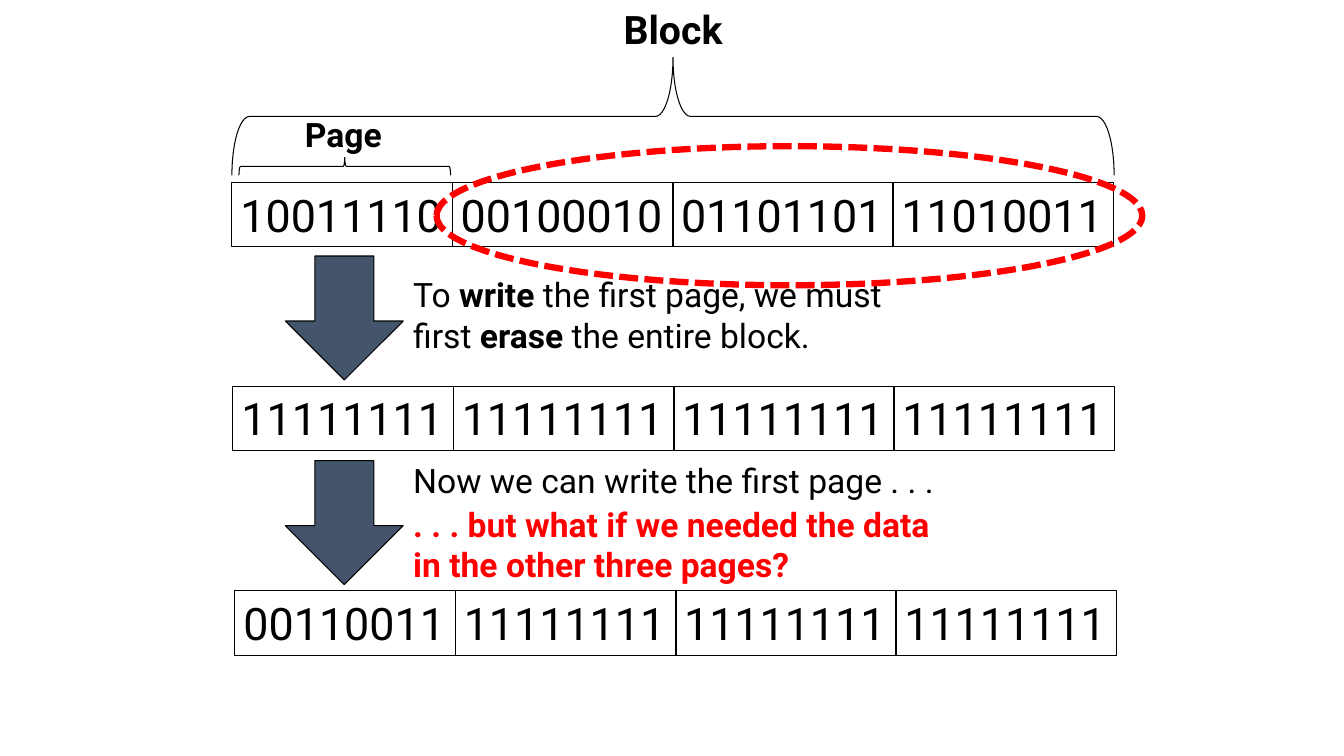
from pptx import Presentation
from pptx.dml.color import RGBColor
from pptx.enum.dml import MSO_LINE
from pptx.enum.shapes import MSO_SHAPE
from pptx.enum.text import MSO_AUTO_SIZE, PP_ALIGN
from pptx.util import Inches, Pt

BLACK = RGBColor(0x00, 0x00, 0x00)
RED = RGBColor(0xFF, 0x00, 0x00)
SLATE = RGBColor(0x44, 0x54, 0x6A)
RECT = MSO_SHAPE.RECTANGLE
BRACE = MSO_SHAPE.RIGHT_BRACE
DOWN_ARROW = MSO_SHAPE.DOWN_ARROW
OVAL = MSO_SHAPE.OVAL
DASH = MSO_LINE.SQUARE_DOT
GROW = MSO_AUTO_SIZE.SHAPE_TO_FIT_TEXT
CENTER = PP_ALIGN.CENTER
LEFT = PP_ALIGN.LEFT

FONT = "Roboto"
PAGE_WIDTH = 2.19
PAGE_PITCH = 2.185
PAGE_HEIGHT = 0.64
ERASED = "11111111"
BLOCKS = [
    (2.3, 1.81, ["10011110", "00100010", "01101101", "11010011"]),
    (2.31, 3.83, [ERASED] * 4),
    (2.33, 5.86, ["00110011"] + [ERASED] * 3),
]


def add_outline(shapes, kind, box, fill=None, line=BLACK, width=0.75):
    sp = shapes.add_shape(kind, *map(Inches, box))
    sp.shadow.inherit = False
    if fill is None:
        sp.fill.background()
    else:
        sp.fill.solid()
        sp.fill.fore_color.rgb = fill
    sp.line.color.rgb = line
    sp.line.width = Pt(width)
    return sp


def add_text(shapes, box, runs, size, color=BLACK, align=LEFT, wrap=True):
    tf = shapes.add_textbox(*map(Inches, box)).text_frame
    tf.word_wrap = wrap
    tf.auto_size = GROW
    p = tf.paragraphs[0]
    p.alignment = align
    for text, bold in runs:
        r = p.add_run()
        r.text = text
        r.font.name = FONT
        r.font.size = Pt(size)
        r.font.bold = bold
        r.font.color.rgb = color


def add_label(shapes, box, text, size, bold=False):
    add_text(shapes, box, [(text, bold)], size, align=CENTER, wrap=False)


def add_brace(shapes, box):
    sp = add_outline(shapes, BRACE, box)
    sp.rotation = 270
    return sp


def add_block(s, left, top, pages):
    shapes = s.shapes.add_group_shape().shapes
    for i, bits in enumerate(pages):
        x = left + i * PAGE_PITCH
        add_outline(shapes, RECT, (x, top, PAGE_WIDTH, PAGE_HEIGHT))
        add_label(shapes, (x - 0.02, top, 2.21, PAGE_HEIGHT), bits, 32)
    return shapes


def add_block_labels(shapes):
    block_brace = add_brace(shapes, (6.09, -3.22, 1.17, 8.75))
    block_brace.adjustments[0] = 0.149
    add_label(shapes, (6, 0, 1.35, 0.57), "Block", 28, True)
    add_brace(shapes, (3.33, 0.6, 0.18, 2.1))
    add_label(shapes, (2.92, 1.08, 0.97, 0.5), "Page", 24, True)


def add_step_arrow(s, top):
    add_outline(s.shapes, DOWN_ARROW, (2.83, top, 1.17, 1.23), SLATE)


def main():
    prs = Presentation()
    prs.slide_width = Inches(13.33)
    prs.slide_height = Inches(7.5)
    s = prs.slides.add_slide(prs.slide_layouts[6])

    first, *_ = [add_block(s, *block) for block in BLOCKS]
    add_block_labels(first)

    add_step_arrow(s, 2.54)
    add_text(s.shapes, (4, 2.67, 5.24, 0.91), [
        ("To ", False),
        ("write", True),
        (" the first page, we must first ", False),
        ("erase", True),
        (" the entire block.", False),
    ], 24)

    add_step_arrow(s, 4.57)
    add_text(s.shapes, (4, 4.51, 5.42, 0.5),
             [("Now we can write the first page . . .", False)], 24)
    add_text(s.shapes, (4, 4.95, 5.42, 0.91),
             [(". . . but what if we needed the data in the other three pages?", True)],
             24, RED)

    other_pages = add_outline(s.shapes, OVAL, (4.33, 1.45, 7, 1.38), line=RED, width=4.5)
    other_pages.line.dash_style = DASH

    prs.save("out.pptx")


if __name__ == "__main__":
    main()
